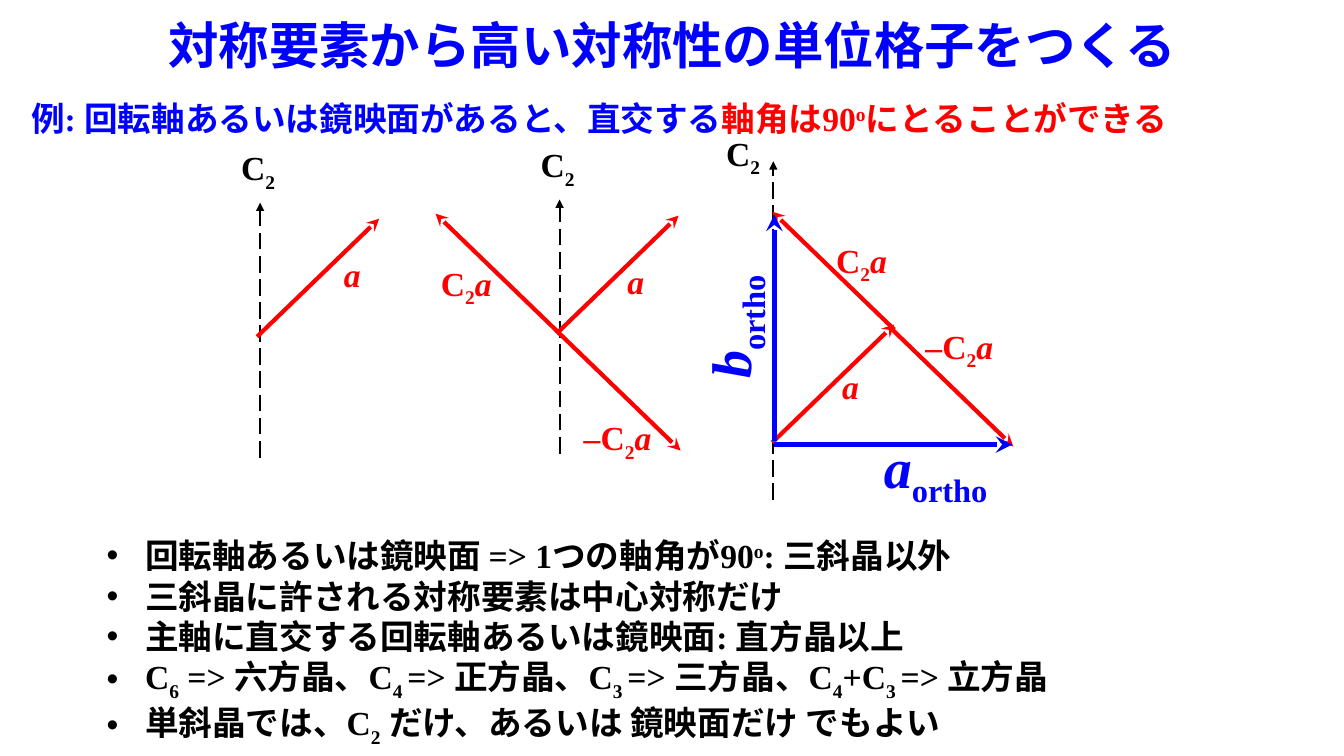
from lxml import etree
from pptx import Presentation
from pptx import util as u
from pptx.dml.color import RGBColor
from pptx.enum import dml, shapes, text
from pptx.oxml import ns

BLUE = RGBColor(0x00, 0x00, 0xFF)
RED = RGBColor(0xFF, 0x00, 0x00)
BLACK = RGBColor(0x00, 0x00, 0x00)
FONT = "Times New Roman"
CELL = u.Inches(0.1)
VECTOR_COLUMNS, VECTOR_ROWS = 12.1, 11.7
SUB, SUP, ITALIC = "sub", "sup", "italic"
BASELINES = {SUB: "-25000", SUP: "30000"}

C2 = [("C", ""), ("2", SUB)]
A = [("a", ITALIC)]
C2_A = C2 + A
MINUS_C2_A = [("–", ITALIC)] + C2_A

RULES = [
    [("回転軸あるいは鏡映面 => 1つの軸角が90", ""), ("o", SUP), (": 三斜晶以外", "")],
    [("三斜晶に許される対称要素は中心対称だけ", "")],
    [("主軸に直交する回転軸あるいは鏡映面: 直方晶以上", "")],
    [("C", ""), ("6", SUB), (" => 六方晶、C", ""), ("4 ", SUB), ("=> 正方晶、C", ""),
     ("3 ", SUB), ("=> 三方晶、C", ""), ("4", SUB), ("+C", ""), ("3 ", SUB),
     ("=> 立方晶", "")],
    [("単斜晶では、C", ""), ("2", SUB), (" だけ、あるいは 鏡映面だけ でもよい", "")],
]


def cells(*counts):
    """Convert numbers of grid cells to slide lengths."""
    return [u.Emu(round(count * CELL)) for count in counts]


def add_runs(paragraph, runs, size, color):
    """Add bold runs, each a pair of wording and style."""
    for wording, style in runs:
        run = paragraph.add_run()
        run.text = wording
        font = run.font
        font.name, font.size, font.bold = FONT, u.Pt(size), True
        font.italic = style == ITALIC
        font.color.rgb = color
        if style in BASELINES:
            font._element.set("baseline", BASELINES[style])


def add_text_box(slide, area, wrap=True):
    """Add an empty text box on the grid."""
    box = slide.shapes.add_textbox(*cells(*area))
    box.text_frame.word_wrap = wrap
    box.text_frame.auto_size = text.MSO_AUTO_SIZE.SHAPE_TO_FIT_TEXT
    return box


def add_label(slide, area, runs, color, size=24, rotation=0):
    """Add a centred label that does not wrap."""
    box = add_text_box(slide, area, wrap=False)
    box.rotation = rotation
    paragraph = box.text_frame.paragraphs[0]
    paragraph.alignment = text.PP_ALIGN.CENTER
    add_runs(paragraph, runs, size, color)


def add_arrow(slide, start, end, color, width, head="stealth", dash=None):
    """Add a straight arrow between two grid points."""
    arrow = slide.shapes.add_connector(
        shapes.MSO_CONNECTOR.STRAIGHT, *cells(*start, *end))
    arrow.line.color.rgb = color
    arrow.line.width = u.Pt(width)
    if dash:
        arrow.line.dash_style = dash
    etree.SubElement(arrow.line._get_or_add_ln(), ns.qn("a:tailEnd"), type=head)
    etree.SubElement(arrow._element.spPr, ns.qn("a:effectLst"))


def add_axis(slide, column, bottom, top, label_corner):
    """Add a dashed twofold axis with its label."""
    add_arrow(slide, (column, bottom), (column, top), BLACK, 1.5,
              "triangle", dml.MSO_LINE.LONG_DASH)
    add_label(slide, (*label_corner, 5.6, 5), C2, BLACK)


def add_vector(slide, start, direction, label_area, runs):
    """Add a red lattice vector with its label."""
    end = (start[0] + direction[0] * VECTOR_COLUMNS,
           start[1] + direction[1] * VECTOR_ROWS)
    add_arrow(slide, start, end, RED, 3)
    add_label(slide, label_area, runs, RED)


def add_title(slide, wording):
    """Place and format the title placeholder."""
    title = slide.shapes.title
    title.left, title.top, title.width, title.height = cells(0, 0, 133.3, 8.7)
    title.text_frame.vertical_anchor = text.MSO_ANCHOR.MIDDLE
    paragraph = title.text_frame.paragraphs[0]
    paragraph.alignment = text.PP_ALIGN.CENTER
    add_runs(paragraph, [(wording, "")], 36, BLUE)


def add_example(slide):
    """Add the two-coloured example line."""
    paragraph = add_text_box(slide, (2.1, 9.2, 126, 5)).text_frame.paragraphs[0]
    add_runs(paragraph, [("例: 回転軸あるいは鏡映面があると、直交する", "")], 24, BLUE)
    add_runs(paragraph, [("軸角は90", ""), ("o", SUP), ("にとることができる", "")], 24, RED)


def add_bullets(slide, area, items):
    """Add a bulleted list with hanging indents."""
    frame = add_text_box(slide, area).text_frame
    for index, runs in enumerate(items):
        paragraph = frame.add_paragraph() if index else frame.paragraphs[0]
        properties = paragraph._p.get_or_add_pPr()
        indent = u.Inches(0.38)
        properties.set("marL", str(indent))
        properties.set("indent", str(-indent))
        etree.SubElement(properties, ns.qn("a:buFont"), typeface="Arial")
        etree.SubElement(properties, ns.qn("a:buChar"), char="•")
        add_runs(paragraph, runs, 24, BLACK)


def main():
    """Build and save the slide."""
    presentation = Presentation()
    presentation.slide_width, presentation.slide_height = u.Inches(13.33), u.Inches(7.5)
    slide = presentation.slides.add_slide(presentation.slide_layouts[5])
    add_title(slide, "対称要素から高い対称性の単位格子をつくる")

    add_axis(slide, 25.8, 45.4, 20.1, (22.8, 14.1))
    add_vector(slide, (25.5, 33.4), (1, -1), (33.1, 24.7, 3.7, 5), A)

    add_axis(slide, 55.5, 45, 19.8, (52.5, 13.8))
    add_vector(slide, (55.3, 32.9), (-1, -1), (42.6, 25.6, 7.3, 5), C2_A)
    add_vector(slide, (55.2, 33.1), (1, -1), (61.2, 25.4, 3.7, 5), A)
    add_vector(slide, (55.4, 33), (1, 1), (56.8, 40.9, 8.9, 5), MINUS_C2_A)

    add_axis(slide, 76.7, 49.6, 16, (70.9, 12.7))
    add_vector(slide, (88.7, 32.7), (-1, -1), (81.8, 23.3, 7.3, 5), C2_A)
    add_vector(slide, (76.6, 43.9), (1, -1), (82.5, 35.8, 3.7, 5), A)
    add_vector(slide, (88.4, 32.6), (1, 1), (90.7, 31.8, 8.9, 5), MINUS_C2_A)
    add_arrow(slide, (76.8, 43.8), (76.8, 21.3), BLUE, 4)
    add_arrow(slide, (76.8, 44.1), (100.4, 44.1), BLUE, 4)
    add_label(slide, (86, 42.4, 13.6, 7.7), [("a", ITALIC), ("ortho", SUB)], BLUE, 40)
    add_label(slide, (65.5, 28.6, 13.6, 7.7), [("b", ITALIC), ("ortho", SUB)], BLUE, 40, 270)

    add_example(slide)
    add_bullets(slide, (9.6, 52.6, 106.9, 21.2), RULES)
    presentation.save("out.pptx")


if __name__ == "__main__":
    main()
